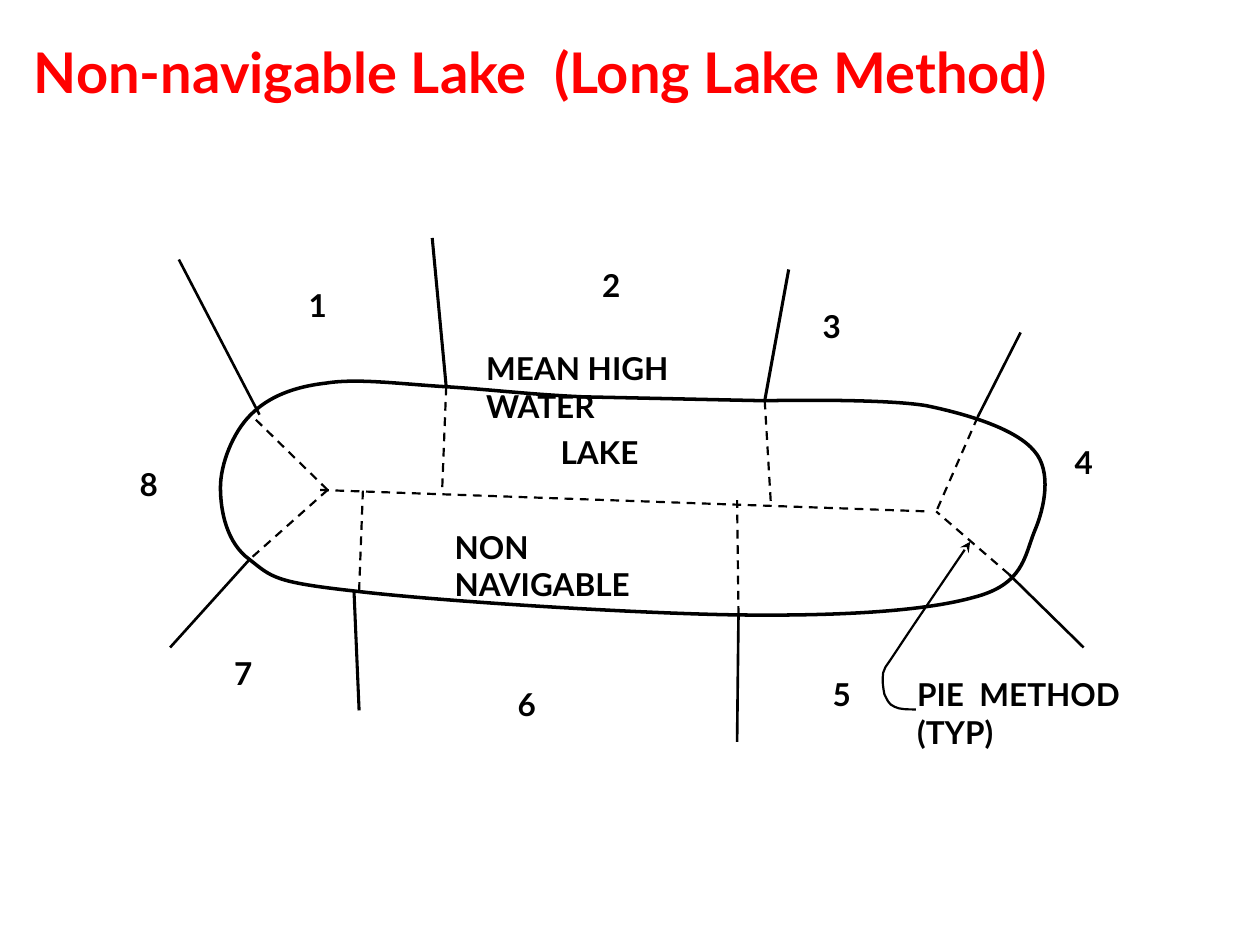
from pptx import Presentation
from pptx.dml.color import RGBColor
from pptx.enum.dml import MSO_LINE_DASH_STYLE as DASH
from pptx.enum.shapes import MSO_CONNECTOR as CONN
from pptx.enum.text import MSO_AUTO_SIZE as AUTO
from pptx.oxml.ns import qn
from pptx.util import Pt
from lxml.etree import SubElement

FONT, BLACK, RED = "Lato", "000000", "FF0000"

# Points are relative to the diagram box; each curve is a start and Bézier triples
LAKE = [
    (183, 85),
    (158.4, 83.6), (132.5, 80), (114.5, 82.9),
    (95.8, 85), (81.4, 90.8), (71.3, 101),
    (61.2, 111), (54, 129), (54, 142.6),
    (54, 156.3), (57.6, 174.3), (70.6, 183.7),
    (83.5, 193.8), (84.2, 196.6), (130.3, 201.7),
    (177.1, 207.4), (291, 214.6), (350, 215.4),
    (409, 216.1), (456.5, 213.2), (484.6, 205.3),
    (512.6, 198.1), (513.4, 182.2), (519.1, 167.8),
    (525, 154.2), (529.2, 133.3), (519.1, 121.8),
    (509, 109.5), (482.4, 101), (457.2, 95.8),
    (431.3, 91.5), (365, 93), (365, 93),
    (330.5, 92.3), (296, 91.5), (261.4, 90.8),
    (230.4, 89.4), (207.4, 86.5), (183, 85),
]
LEADER = [
    (451.4, 269.4),
    (446.4, 269.4), (442.1, 269.4), (439.2, 267.9),
    (435.6, 266.5), (434.9, 263.6), (433.4, 260.7),
    (432.7, 257.1), (432, 252.8), (432.7, 248.5),
    (434.2, 244.2), (432, 248.5), (440.6, 235.5),
    (448.6, 223.3), (465.8, 198.1), (482.4, 173.6),
]
WEST, EAST = (115.2, 144), (463, 156.3)

# Lot boundaries: shore point, outer end, line width
LOT_LINES = [
    ((76.3, 101), (30.2, 12.3), 1.5),
    ((183, 85), (175, 0), 1.75),
    ((365, 93), (378.7, 18), 1.75),
    ((486.7, 102.3), (511.2, 54), 1.5),
    ((504.7, 192.3), (547.2, 234), 1.5),
    ((350, 215.4), (349.2, 288), 1.5),
    ((130.3, 201.7), (133.2, 270), 1.75),
    ((70.6, 183.7), (25.2, 234), 1.5),
]
# Divisions of the lake bed
BED_LINES = [
    ((111, 144), (459.4, 156.3)),
    (WEST, (71.3, 101)),
    (WEST, (70.6, 183.7)),
    ((486.7, 102.3), EAST),
    ((504.7, 192.3), EAST),
    ((183, 85), (180.7, 143.4)),
    ((365, 93), (368.6, 153.4)),
    ((350, 215.4), (349.2, 149.8)),
    ((133.2, 201.7), (135.4, 144)),
]
# Labels: text, left, top, width, height
LABELS = [
    ("1", 97.2, 23.8, 41.8, 29),
    ("2", 265, 12.3, 48.2, 29),
    ("3", 391, 36, 54, 29),
    ("4", 535, 113.8, 48.2, 29),
    ("5", 396.7, 246.3, 54, 29),
    ("6", 216.7, 252, 54, 30),
    ("7", 54.7, 234, 48.2, 29),
    ("8", 0.7, 126, 36, 29),
    ("LAKE", 241.2, 108, 66.2, 30),
    ("NON  NAVIGABLE", 180.7, 162, 156.2, 30),
    ("MEAN HIGH WATER", 198.7, 59.8, 167.8, 29),
    ("PIE  METHOD (TYP)", 445, 246.3, 143.3, 51),
]


def color(value):
    return RGBColor.from_string(value)


def add_text(s, text, x, y, w, h, size=18, fill=BLACK, bold=True):
    tf = s.shapes.add_textbox(Pt(x), Pt(y), Pt(w), Pt(h)).text_frame
    tf.word_wrap = True
    tf.auto_size = AUTO.SHAPE_TO_FIT_TEXT
    r = tf.paragraphs[0].add_run()
    r.text = text
    r.font.name, r.font.size, r.font.bold = FONT, Pt(size), bold
    r.font.color.rgb = color(fill)


def add_line(s, start, end, x, y, width, dash=None):
    (x1, y1), (x2, y2) = start, end
    c = s.shapes.add_connector(CONN.STRAIGHT, Pt(x + x1), Pt(y + y1),
                               Pt(x + x2), Pt(y + y2))
    c.line.color.rgb = color(BLACK)
    c.line.width = Pt(width)
    if dash:
        c.line.dash_style = dash
    SubElement(c.element.spPr, qn("a:effectLst"))


def add_curve(s, points, x, y, width, close=False, arrow=False):
    start, *rest = [(Pt(x + px), Pt(y + py)) for px, py in points]
    builder = s.shapes.build_freeform(*start)
    builder.add_line_segments(rest, close=close)
    sp = builder.convert_to_shape()
    sp.shadow.inherit = False
    sp.fill.background()
    sp.line.color.rgb = color(BLACK)
    sp.line.width = Pt(width)

    # Join every three segments into one Bézier curve
    segments = list(sp.element.iter(qn("a:lnTo")))
    for i in range(0, len(segments), 3):
        curve = segments[i].makeelement(qn("a:cubicBezTo"))
        segments[i].addprevious(curve)
        for segment in segments[i:i + 3]:
            curve.append(segment[0])
            segment.getparent().remove(segment)
    if arrow:
        ln = sp.element.spPr.find(qn("a:ln"))
        SubElement(ln, qn("a:tailEnd"), type="stealth")


def add_title(s, x, y, w, h):
    add_text(s, "Non-navigable Lake  (Long Lake Method)", x, y, w, h,
             size=32, fill=RED)


def add_diagram(s, x, y):
    # Shoreline
    add_curve(s, LAKE, x, y, 2, close=True)
    # Boundaries on land and in the lake bed
    for start, end, width in LOT_LINES:
        add_line(s, start, end, x, y, width)
    for start, end in BED_LINES:
        add_line(s, start, end, x, y, 1.25, DASH.DASH)
    # Lot numbers and notes
    for text, left, top, w, h in LABELS:
        add_text(s, text, x + left, y + top, w, h)
    # Leader to the pie method line
    add_curve(s, LEADER, x, y, 1.25, arrow=True)


def main():
    prs = Presentation()
    prs.slide_width, prs.slide_height = Pt(720), Pt(540)
    s = prs.slides.add_slide(prs.slide_layouts[6])
    add_diagram(s, 72, 136)
    add_title(s, 12.2, 18, 690, 46)
    prs.save("out.pptx")


if __name__ == "__main__":
    main()
